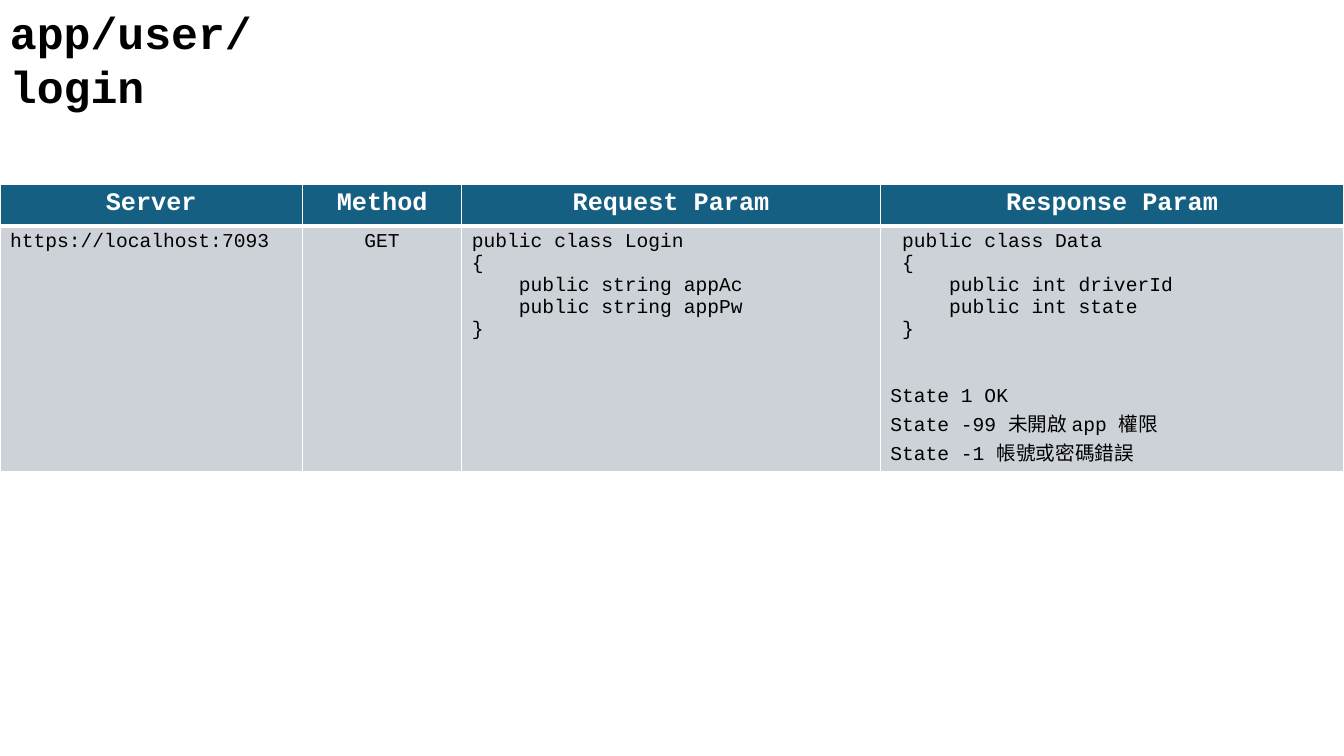
from dataclasses import dataclass

from lxml import etree
from pptx import Presentation
from pptx.dml.color import RGBColor
from pptx.enum.text import MSO_AUTO_SIZE, PP_ALIGN
from pptx.oxml.ns import qn
from pptx.util import Inches, Pt

LEFT, CENTER = PP_ALIGN.LEFT, PP_ALIGN.CENTER
GROW = MSO_AUTO_SIZE.SHAPE_TO_FIT_TEXT


@dataclass(frozen=True)
class Theme:
    """Hold the colours, font and sizes of the slide."""
    font: str = "Courier New"
    ink: str = "000000"
    white: str = "FFFFFF"
    head: str = "156082"
    body: str = "CCD2D8"
    title_size: int = 32
    head_size: int = 18
    body_size: int = 14
    thin: int = 1
    thick: int = 3
    gap: int = 32


THEME = Theme()
WIDTHS = (3, 1.58, 4.15, 4.6)
HEIGHTS = (0.41, 2.43)
HEADS = ("Server", "Method", "Request Param", "Response Param")
REQUEST = """public class Login
{
    public string appAc
    public string appPw
}"""
RESPONSE = """ public class Data
 {
     public int driverId
     public int state
 }
State 1 OK
State -99 未開啟 app 權限
State -1 帳號或密碼錯誤"""
VALUES = ("https://localhost:7093", "GET", REQUEST, RESPONSE)
FIRST_STATE = 5


def style(frame, size, color, bold, align):
    """Format every run and paragraph of a text frame."""
    for para in frame.paragraphs:
        para.alignment = align
        for run in para.runs:
            font = run.font
            font.name, font.size, font.bold = THEME.font, Pt(size), bold
            font.color.rgb = RGBColor.from_string(color)


def edge(cell, side, width):
    """Draw one white border of a cell."""
    line = etree.SubElement(cell._tc.get_or_add_tcPr(), qn("a:ln" + side), w=str(Pt(width)))
    fill = etree.SubElement(line, qn("a:solidFill"))
    etree.SubElement(fill, qn("a:srgbClr"), val=THEME.white)


def paint(cell, color, top, bottom):
    """Set the borders and fill of a cell."""
    widths = {"L": THEME.thin, "R": THEME.thin, "T": top, "B": bottom}
    for side, width in widths.items():
        edge(cell, side, width)
    cell.fill.solid()
    cell.fill.fore_color.rgb = RGBColor.from_string(color)


def add_title(slide, left, top, width, height):
    """Place the route name in its box."""
    box = slide.shapes.add_textbox(Inches(left), Inches(top), Inches(width), Inches(height))
    frame = box.text_frame
    frame.word_wrap = True
    frame.auto_size = GROW
    frame.text = "app/user/login"
    style(frame, THEME.title_size, THEME.ink, True, LEFT)


def add_spec(slide, left, top, width, height):
    """Place the table of server, method and parameters."""
    table = slide.shapes.add_table(
        len(HEIGHTS), len(WIDTHS), Inches(left), Inches(top), Inches(width), Inches(height)
    ).table
    for row, size in zip(table.rows, HEIGHTS):
        row.height = Inches(size)
    for col, size in enumerate(WIDTHS):
        table.columns[col].width = Inches(size)
        head, body = table.cell(0, col), table.cell(1, col)
        head.text_frame.text = HEADS[col]
        body.text_frame.text = VALUES[col]
        align = CENTER if HEADS[col] == "Method" else LEFT
        style(head.text_frame, THEME.head_size, THEME.white, True, CENTER)
        style(body.text_frame, THEME.body_size, THEME.ink, False, align)
        paint(head, THEME.head, THEME.thin, THEME.thick)
        paint(body, THEME.body, THEME.thick, THEME.thin)
    states = table.cell(1, len(WIDTHS) - 1).text_frame.paragraphs
    states[FIRST_STATE].space_before = Pt(THEME.gap)


def main():
    """Build and save the slide."""
    deck = Presentation()
    deck.slide_width, deck.slide_height = Inches(13.33), Inches(7.5)
    slide = deck.slides.add_slide(deck.slide_layouts[6])
    add_spec(slide, 0, 1.83, sum(WIDTHS), sum(HEIGHTS))
    add_title(slide, 0, 0, 3.73, 0.64)
    deck.save("out.pptx")


if __name__ == "__main__":
    main()
